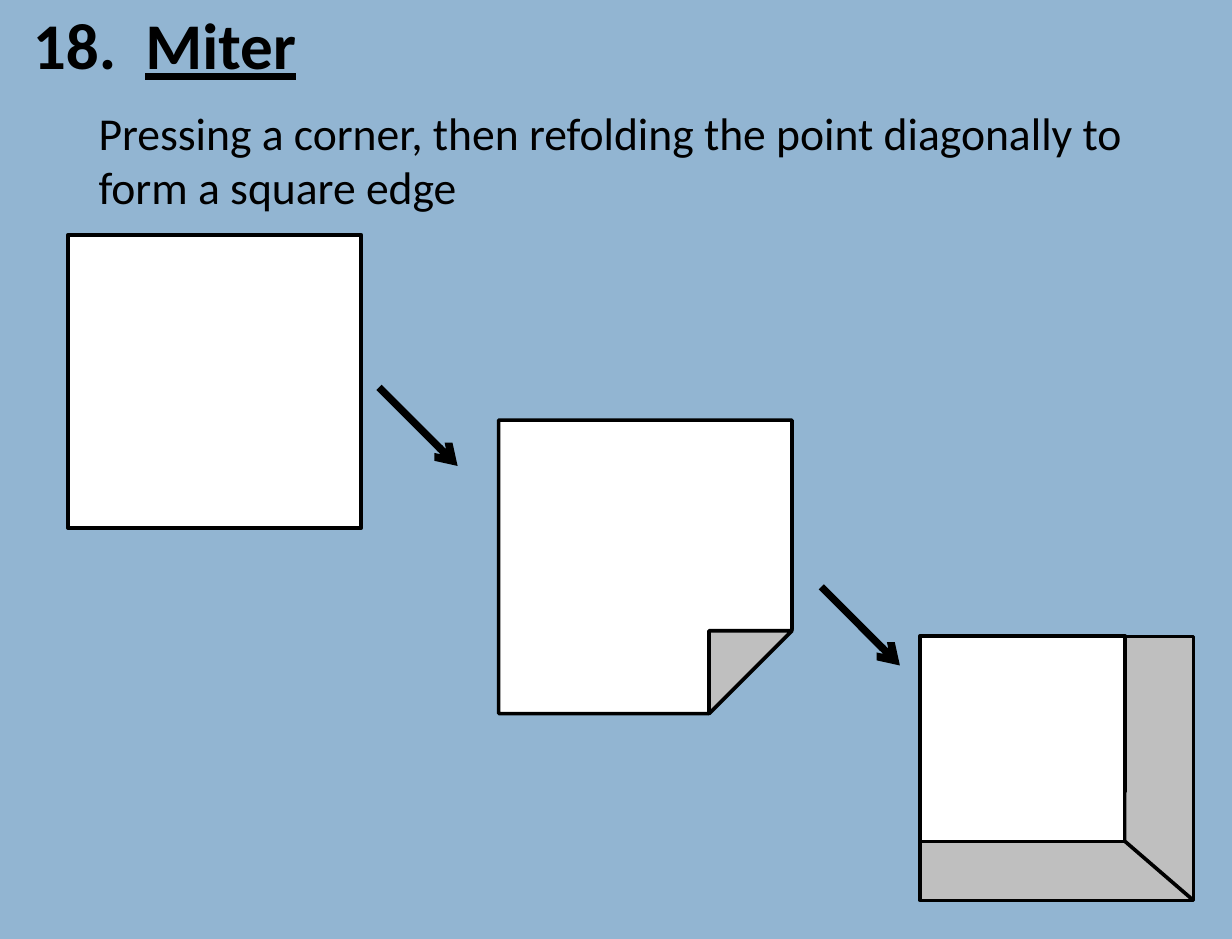
from lxml import etree
from pptx import Presentation
from pptx.dml.color import RGBColor
from pptx.enum import shapes, text
from pptx.oxml.ns import qn
from pptx.util import Inches, Pt

INK, PAPER, FOLD, SKY = "000000", "FFFFFF", "BFBFBF", "92B5D2"
KIND = shapes.MSO_SHAPE


def colour(fill, value):
    fill.solid()
    fill.fore_color.rgb = RGBColor.from_string(value)


def add_run(paragraph, words, **formats):
    run = paragraph.add_run()
    run.text = words
    settings = {"name": "Calibri", "size": Pt(28), "bold": False, **formats}
    for key, value in settings.items():
        setattr(run.font, key, value)
    colour(run.font.fill, INK)


def prepare_frame(holder, left, top, width, height):
    holder.left, holder.top = Inches(left), Inches(top)
    holder.width, holder.height = Inches(width), Inches(height)
    frame = holder.text_frame
    settings = {"word_wrap": True, "auto_size": text.MSO_AUTO_SIZE.NONE,
                "vertical_anchor": text.MSO_ANCHOR.TOP,
                "margin_left": Inches(0.11), "margin_right": Inches(0.11),
                "margin_top": Inches(0.05), "margin_bottom": Inches(0.05)}
    for key, value in settings.items():
        setattr(frame, key, value)
    paragraph = frame.paragraphs[0]
    paragraph.alignment = text.PP_ALIGN.LEFT
    return paragraph


def add_piece(slide, kind, left, top, width, height, fill=FOLD, line=2.25, turn=0):
    piece = slide.shapes.add_shape(
        kind, Inches(left), Inches(top), Inches(width), Inches(height))
    piece.shadow.inherit = False
    piece.rotation = turn
    colour(piece.fill, fill)
    if line:
        colour(piece.line.fill, INK)
        piece.line.width = Pt(line)
    else:
        piece.line.fill.background()
    return piece


def add_stroke(slide, left, top, width, height, weight=2.25, arrow=False):
    stroke = slide.shapes.add_connector(
        shapes.MSO_CONNECTOR.STRAIGHT, Inches(left), Inches(top),
        Inches(left + width), Inches(top + height))
    colour(stroke.line.fill, INK)
    stroke.line.width = Pt(weight)
    if arrow:
        etree.SubElement(stroke.line._get_or_add_ln(), qn("a:tailEnd"), type="arrow")
    etree.SubElement(stroke._element.spPr, qn("a:effectLst"))


def add_term(slide, left, top, width):
    # Numbered term, with a hanging indent after the number
    heading = prepare_frame(slide.shapes.title, left, top, width, 0.8)
    properties = heading._p.get_or_add_pPr()
    properties.set("marL", str(Inches(0.96)))
    properties.set("indent", str(-Inches(0.96)))
    add_run(heading, "18.\t", size=Pt(40), bold=True)
    add_run(heading, "Miter", size=Pt(40), bold=True, underline=True)

    # Definition, indented below the term
    indent = 0.56
    box = slide.shapes.add_textbox(0, 0, 0, 0)
    definition = prepare_frame(box, left + indent, top + 0.85, width - indent, 1.08)
    add_run(definition, "Pressing a corner, then refolding the point "
                        "diagonally to form a square edge")


def add_flat_square(slide, left, top, size):
    add_piece(slide, KIND.RECTANGLE, left, top, size, size, PAPER)


def add_pressed_corner(slide, left, top, size):
    sheet = add_piece(slide, KIND.SNIP_1_RECTANGLE, left, top, size, size, PAPER, turn=90)
    sheet.adjustments[0] = 0.287
    add_piece(slide, KIND.ISOSCELES_TRIANGLE, left + 1.47, top + 1.72, 1, 0.5, turn=315)


def add_mitered_corner(slide, left, top, size):
    side, hem = 0.58, 0.5
    right, bottom = left + size, top + size
    add_piece(slide, KIND.RECTANGLE, left, top, size, size, PAPER)
    add_piece(slide, KIND.RECTANGLE, right, top, side, size, line=2)
    add_piece(slide, KIND.RECTANGLE, left, bottom, size + side, hem, line=2)
    # Patch hides the seam under the diagonal fold
    add_piece(slide, KIND.RECTANGLE, right + 0.01, bottom - 0.42, 0.56, 0.75, line=None)
    add_stroke(slide, right, bottom, side, hem)


def main():
    deck = Presentation()
    deck.slide_width, deck.slide_height = Inches(10.5), Inches(8)
    slide = deck.slides.add_slide(deck.slide_layouts[5])
    colour(slide.background.fill, SKY)

    add_term(slide, 0.17, -0.01, 10.17)

    # Three folding steps
    add_flat_square(slide, 0.58, 2, 2.5)
    add_pressed_corner(slide, 4.25, 3.58, 2.5)
    add_mitered_corner(slide, 7.84, 5.42, 1.75)

    # Arrows between the steps
    for left, top in ((3.23, 3.3), (7, 5)):
        add_stroke(slide, left, top, 0.67, 0.67, weight=4.5, arrow=True)

    deck.save("out.pptx")


if __name__ == "__main__":
    main()
